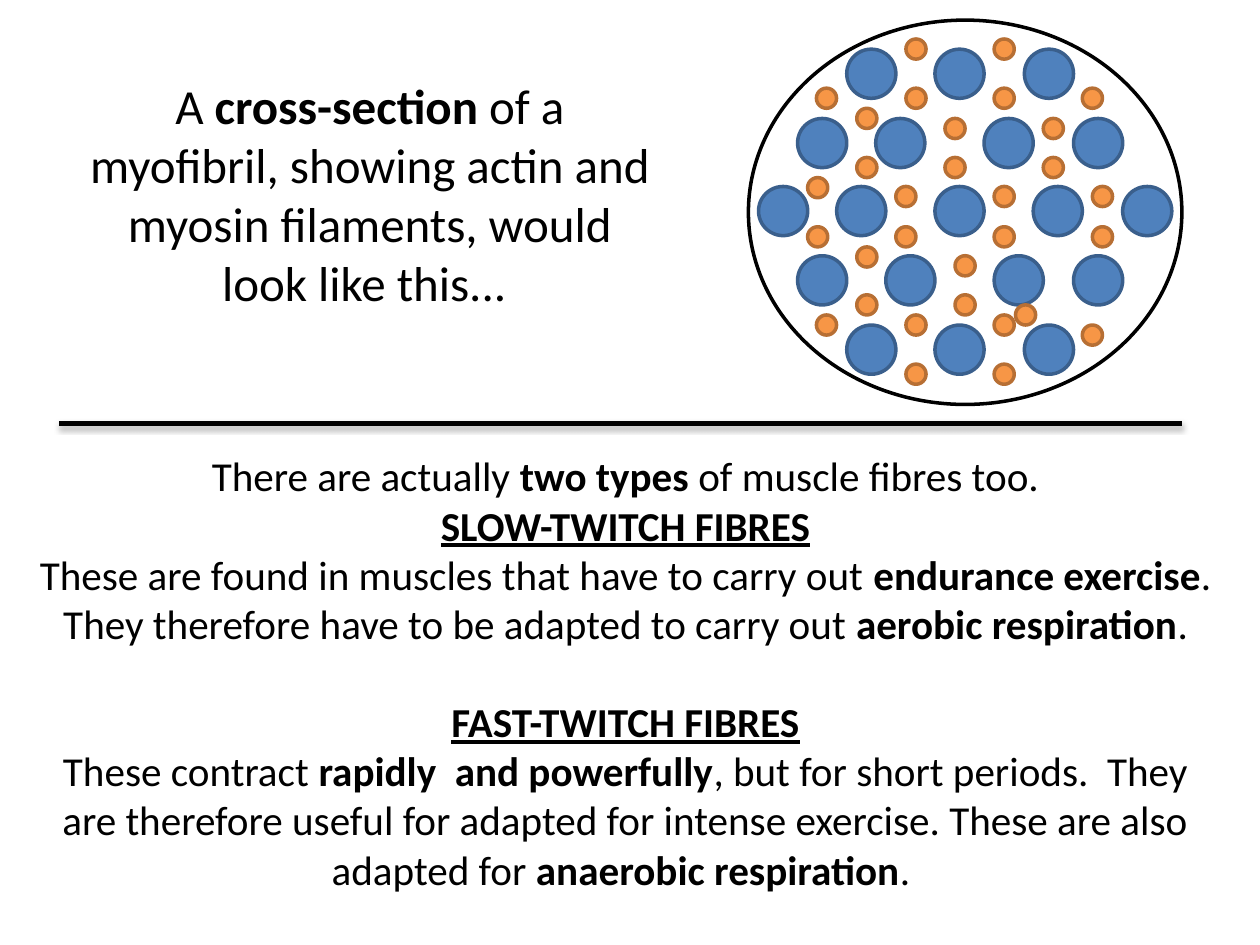
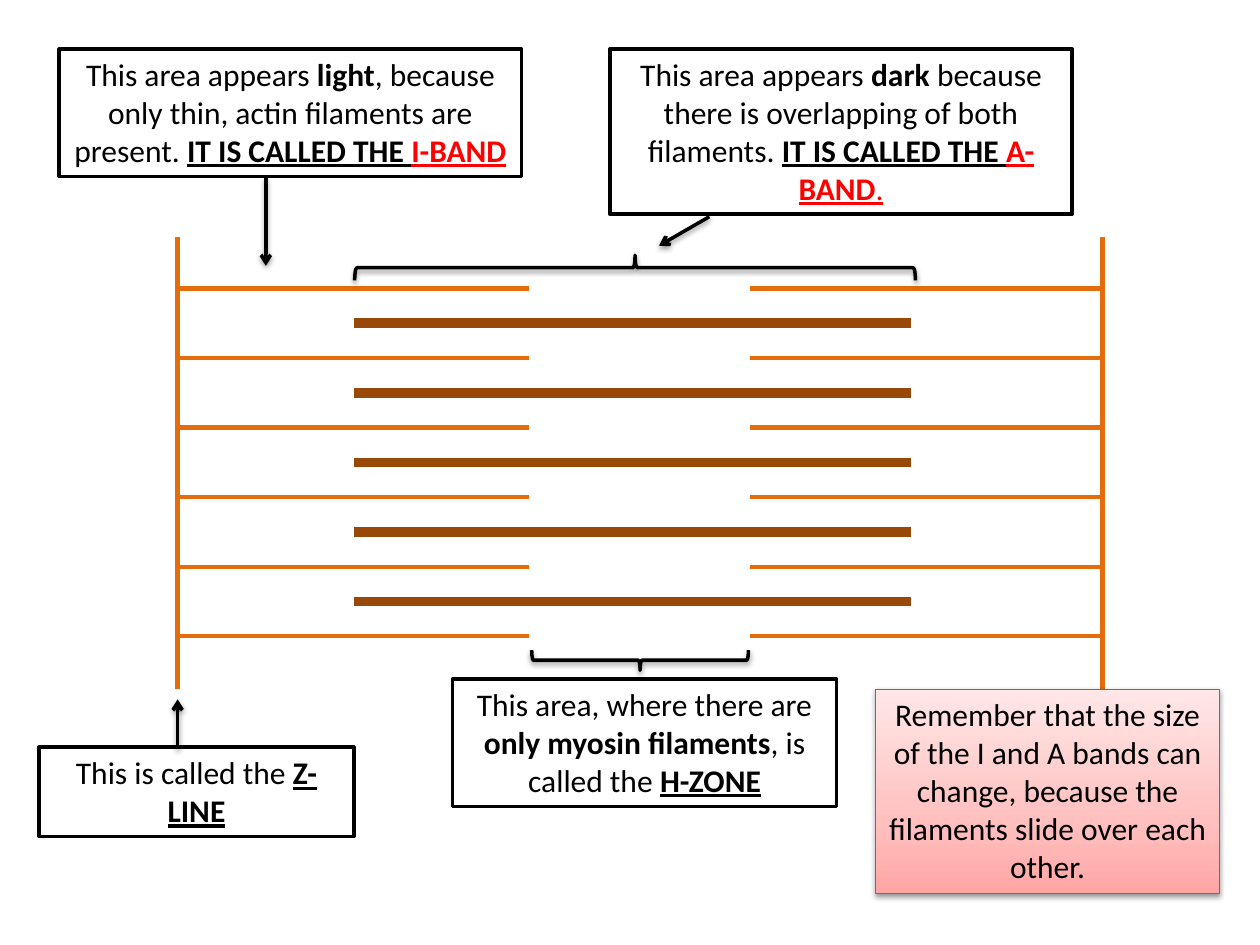
import pptx
import pptx.util
import pptx.dml.color
import pptx.enum.shapes
import pptx.enum.text
import pptx.oxml.ns
import copy
import lxml.etree

Inches = pptx.util.Inches
Pt = pptx.util.Pt
SHAPES = pptx.enum.shapes.MSO_SHAPE
FONT = "Calibri"
BLACK, WHITE, RED = "000000", "FFFFFF", "FF0000"
MYOSIN_LINE, ACTIN_LINE = "984807", "E46C0A"
SHADOW = (38, 3.1, 1.6)

CROSS_SECTION = [[
    ("A ", ""), ("cross-section ", "b"),
    ("of a myofibril, showing actin and myosin filaments, would look like this... ", "")]]

FIBRE_TYPES = [
    [("There are actually ", ""), ("two types ", "b"), ("of muscle fibres too.", "")],
    [("SLOW-TWITCH FIBRES", "bu")],
    [("These are found in muscles that have to carry out ", ""), ("endurance exercise", "b"),
     (". They therefore have to be adapted to carry out ", ""), ("aerobic respiration", "b"), (".", "")],
    [("FAST-TWITCH FIBRES", "bu")],
    [("These contract ", ""), ("rapidly  and powerfully", "b"),
     (", but for short periods.  They are therefore useful for adapted for intense exercise. "
      "These are also adapted for ", ""), ("anaerobic respiration", "b"), (". ", "")]]
FAST_HEADING = 3

MYOSIN = {"size": 0.39, "fill": "4F81BD", "line": "3A5F8C", "rows": {
    0.39: [6.72, 7.42, 8.13],
    0.94: [6.33, 6.95, 7.81, 8.52],
    1.48: [6.02, 6.64, 7.42, 8.2, 8.91],
    2.03: [6.33, 7.03, 7.89, 8.52],
    2.58: [6.72, 7.42, 8.13]}}
ACTIN = {"size": 0.16, "fill": "F79646", "line": "B76F34", "rows": {
    0.31: [7.19, 7.89],
    0.7: [6.48, 7.19, 7.89, 8.59],
    0.86: [6.8],
    0.94: [7.5, 8.28],
    1.25: [6.8, 7.5, 8.28],
    1.41: [6.41],
    1.48: [7.11, 7.89, 8.67],
    1.8: [6.41, 7.11, 7.89, 8.67],
    1.96: [6.8],
    2.03: [7.58],
    2.34: [6.8, 7.58],
    2.42: [8.06],
    2.5: [6.48, 7.19, 7.89],
    2.58: [8.59],
    2.89: [7.19, 7.89]}}

LABELS = [
    ((0.47, 0.39, 3.67, 1.01), [
        ("This area appears ", ""), ("light", "b"),
        (", because only thin, actin filaments are present. ", ""),
        ("IT IS CALLED THE ", "bu"), ("I-BAND", "bur")]),
    ((4.84, 0.39, 3.67, 1.31), [
        ("This area appears ", ""), ("dark", "b"),
        (" because there is overlapping of both filaments. ", ""),
        ("IT IS CALLED THE ", "bu"), ("A-BAND", "bur"), (".", "ur")]),
    ((3.59, 5.39, 3.05, 1.01), [
        ("This area, where there are ", ""), ("only myosin filaments", "b"),
        (", is called the ", ""), ("H-ZONE", "bu")]),
    ((0.31, 5.93, 2.5, 0.71), [("This is called the ", ""), ("Z-LINE", "bu")])]
REMINDER = [("Remember that the size of the I and A bands can change, "
             "because the filaments slide over each other.", "")]
REMINDER_STOPS = [(0, "FFA6A5"), (0.35, "FFC0BF"), (1, "FFE7E7")]

ARROWS = [(2.11, 1.41, 2.11, 2.11), (5.63, 1.72, 5.23, 1.95), (1.41, 5.94, 1.41, 5.55)]
BRACES = [((4.94, -0.1, 0.2, 4.45), 90), ((5, 4.38, 0.16, 1.72), 270)]

Z_LINES = (1.41, 8.75)
ACTIN_ENDS = (4.2, 5.95)
MYOSIN_ENDS = (2.81, 7.23)
FIRST_ACTIN, FILAMENT_STEP, ACTIN_COUNT = 2.29, 0.552, 6


def colour(value):
    return pptx.dml.color.RGBColor.from_string(value)


def child(parent, tag, **attributes):
    element = lxml.etree.SubElement(parent, pptx.oxml.ns.qn(tag))
    for name, value in attributes.items():
        element.set(name, str(value))
    return element


def set_line(shape, value, width):
    shape.line.color.rgb = colour(value)
    shape.line.width = Pt(width)


def add_shadow(effects, alpha, blur, distance):
    shadow = child(effects, "a:outerShdw", blurRad=Pt(blur), dist=Pt(distance),
                   dir=5400000, rotWithShape=0)
    child(child(shadow, "a:srgbClr", val=BLACK), "a:alpha", val=alpha * 1000)


def add_line(page, ends, value, width, arrow=False, shadow=None):
    line = page.shapes.add_connector(
        pptx.enum.shapes.MSO_CONNECTOR.STRAIGHT, *map(Inches, ends))
    set_line(line, value, width)
    if arrow:
        child(line.line._get_or_add_ln(), "a:tailEnd", type="arrow")
    effects = child(line._element.spPr, "a:effectLst")
    if shadow:
        add_shadow(effects, *shadow)


def add_figure(page, kind, at, line, fill=None, rotation=0, shadow=None):
    figure = page.shapes.add_shape(kind, *map(Inches, at))
    figure.rotation = rotation
    if fill:
        figure.fill.solid()
        figure.fill.fore_color.rgb = colour(fill)
    else:
        figure.fill.background()
    set_line(figure, line, 2)
    figure.shadow.inherit = False
    if shadow:
        add_shadow(figure._element.spPr.find(pptx.oxml.ns.qn("a:effectLst")), *shadow)


def add_text(page, at, paragraphs, size=18, pitch=None, fill=None, line=None, width=2):
    box = page.shapes.add_textbox(*map(Inches, at))
    frame = box.text_frame
    frame.word_wrap = True
    for index, spans in enumerate(paragraphs):
        para = frame.add_paragraph() if index else frame.paragraphs[0]
        para.alignment = pptx.enum.text.PP_ALIGN.CENTER
        if pitch:
            para.line_spacing = Pt(pitch)
        for text, style in spans:
            span = para.add_run()
            span.text = text
            span.font.name = FONT
            span.font.size = Pt(size)
            span.font.bold = "b" in style
            span.font.underline = "u" in style
            span.font.color.rgb = colour(RED if "r" in style else BLACK)
    if fill:
        box.fill.solid()
        box.fill.fore_color.rgb = colour(fill)
    if line:
        set_line(box, line, width)
    return box


def set_gradient(box, stops):
    box.fill.gradient()
    box.fill.gradient_angle = 90
    stop_list = box._element.spPr.find(".//" + pptx.oxml.ns.qn("a:gsLst"))
    stop_list.append(copy.deepcopy(stop_list[0]))
    for stop, (position, value) in zip(box.fill.gradient_stops, stops):
        stop.position = position
        stop.color.rgb = colour(value)


def build_cross_section(page):
    add_figure(page, SHAPES.OVAL, (5.94, 0.16, 3.44, 3.05), BLACK, WHITE)
    add_text(page, (0.55, 0.55, 4.77, 1.99), CROSS_SECTION, size=28)
    for filament in (MYOSIN, ACTIN):
        size = filament["size"]
        for top, lefts in filament["rows"].items():
            for left in lefts:
                add_figure(page, SHAPES.OVAL, (left, top, size, size),
                           filament["line"], filament["fill"])
    add_line(page, (9.38, 3.36, 0.47, 3.36), BLACK, 3, shadow=(35, 3.1, 1.8))
    box = add_text(page, (0.16, 3.53, 9.61, 3.66), FIBRE_TYPES, size=23.5, pitch=28.1)
    box.text_frame.paragraphs[FAST_HEADING].space_before = Pt(28.1)


def build_sarcomere(page):
    for index in range(ACTIN_COUNT):
        y = FIRST_ACTIN + index * FILAMENT_STEP
        for z_line, end in zip(Z_LINES, ACTIN_ENDS):
            add_line(page, (z_line, y, end, y), ACTIN_LINE, 2.5)
        if index < ACTIN_COUNT - 1:
            middle = y + FILAMENT_STEP / 2
            add_line(page, (MYOSIN_ENDS[0], middle, MYOSIN_ENDS[1], middle), MYOSIN_LINE, 5.5)
    for x in Z_LINES:
        add_line(page, (x, 1.88, x, 5.47), ACTIN_LINE, 2.5)
    for at, spans in LABELS:
        add_text(page, at, [spans], fill=WHITE, line=BLACK)
    for at, rotation in BRACES:
        add_figure(page, SHAPES.LEFT_BRACE, at, BLACK, rotation=rotation, shadow=SHADOW)
    for ends in ARROWS:
        add_line(page, ends, BLACK, 2, arrow=True, shadow=SHADOW)
    box = add_text(page, (6.95, 5.47, 2.73, 1.62), [REMINDER], line="BF4C48", width=0.75)
    set_gradient(box, REMINDER_STOPS)
    box.shadow.inherit = False
    add_shadow(box._element.spPr.find(pptx.oxml.ns.qn("a:effectLst")), *SHADOW)


def main():
    deck = pptx.Presentation()
    deck.slide_width, deck.slide_height = Inches(10), Inches(7.5)
    for build in (build_cross_section, build_sarcomere):
        build(deck.slides.add_slide(deck.slide_layouts[6]))
    deck.save("out.pptx")


if __name__ == "__main__":
    main()
